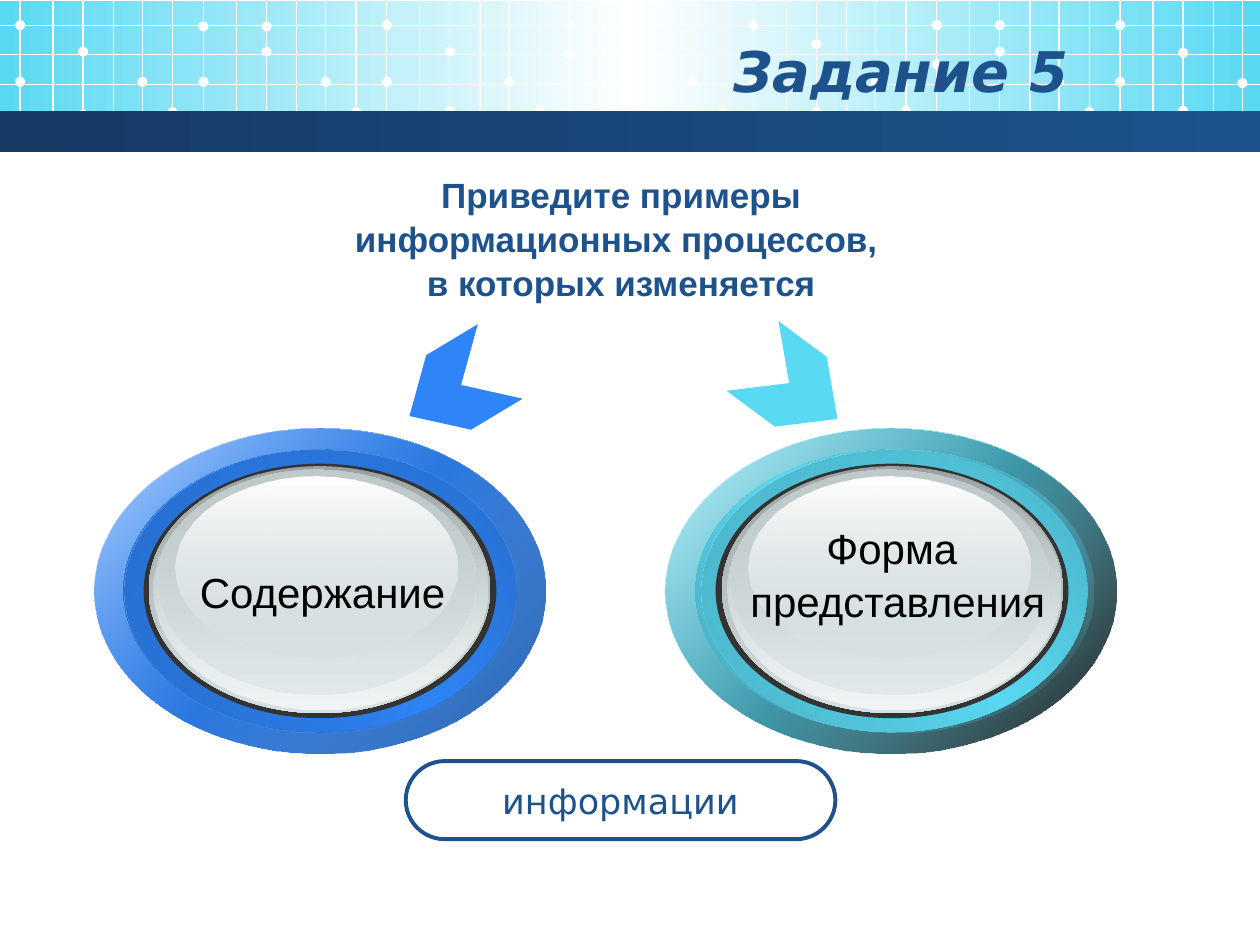
from pptx import Presentation
from pptx.dml.color import RGBColor as RGB
from pptx.enum.shapes import MSO_CONNECTOR as CONN, MSO_SHAPE as SHAPE
from pptx.enum.text import MSO_ANCHOR as ANCHOR, MSO_AUTO_SIZE as AUTO, PP_ALIGN as ALIGN
from pptx.oxml import parse_xml
from pptx.oxml.ns import nsdecls, qn
from pptx.util import Inches, Pt

# Content
TITLE = "Задание 5"
TASK = ["Приведите примеры информационных процессов, ", "в которых изменяется"]
LABELS = [  # box, lines
    ((0.77, 4.43, 3.58, 0.6), ["Содержание"]),
    ((5.46, 4.08, 3.33, 1.07), ["Форма ", "представления"]),
]
BADGE = "информации"
SANS, WIDE = "Arial", "DejaVu Sans"

C = {
    "white": "FFFFFF", "black": "000000", "navy": "1D528D", "night": "153B65",
    "blue": "2F85F7", "aqua": "5AD9F2", "hole": "333333",
    "steel": "99A1A2", "mist": "D6E1E2", "pale": "F2F5F5", "ash": "C1CBCC",
}

# Header grid: tiles of six columns, dots given by column and height
TILE, START = 1.455, 0.16
COLS = (0, 0.26, 0.5, 0.74, 0.97, 1.21)
ROWS = (0.2, 0.43, 0.67, 0.89)
DOT, DOT_COLS = 0.08, (0, 0, 2, 2, 4, 5)
DOTS = [
    (0.65, 0.2, 0.41, 0.91, 0.65, 0.89),
    (0.65, 0.21, 0.41, 0.21, 0.65, 0.89),
    (0.65, 0.2, 0.41, 0.88, 0.65, 0.88),
    (0.43, 0.2, 0.42, 0.2, 0.65, 0.89),
    (0.66, 0.2, 0.35, 0.89, 0.64, 0.88),
    (0.51, 0.2, 0.41, 0.2, 0.65, 0.89),
    (0.65, 0.2, 0.42, 0.88, 0.66),
]

# Discs: left edge, offsets of rim layers and glass, rim gradients
CHEVRONS = [(3.19, 2.74, 149, "blue"), (5.89, 2.73, 36.6, "aqua")]
DISC_TOP = 3.4
RIM = [  # top, width, height, angle
    (0, 3.58, 2.58, 45), (0, 3.58, 2.58, 45),
    (0.17, 3.11, 2.24, 315), (0.17, 3.11, 2.24, 45),
]
DISCS = [
    (5.28, (0, 0, 0.24, 0.29), 0.4, 0.45, [
        [(0, C["white"]), (50, C["aqua"]), (100, C["white"])],
        [(0, C["aqua"], 32), (100, C["black"], 90)],
        [(0, "45A6B9"), (50, C["aqua"]), (100, "45A6B9")],
        [(0, "4AB2C7"), (100, C["aqua"], 0)]]),
    (0.75, (0, 0, 0.23, 0.24), 0.39, 0.43, [
        [(0, C["white"]), (50, C["blue"]), (100, C["white"])],
        [(0, C["blue"], 32), (100, "225FB1")],
        [(0, "2466BD"), (50, C["blue"]), (100, "2466BD")],
        [(0, "276DCB"), (100, C["blue"], 0)]]),
]
GLASS = [  # offset from glass edge, top, width, height, gradient
    (0, 0.3, 2.71, 1.96, [(0, C["steel"]), (100, C["mist"])]),
    (0.04, 0.32, 2.65, 1.91, [(0, C["mist"], 0), (100, C["pale"])]),
    (0.07, 0.33, 2.52, 1.78, [(0, C["ash"]), (100, C["mist"], 48)]),
    (0.21, 0.38, 2.24, 1.45, [(0, C["white"]), (100, C["mist"], 38)]),
]

prs = Presentation()
prs.slide_width, prs.slide_height = Inches(10), Inches(7.5)
slide = prs.slides.add_slide(prs.slide_layouts[5])
shapes = slide.shapes


def grad(stops, angle):
    marks = ""
    for pos, tint, *alpha in stops:
        veil = f'<a:alpha val="{alpha[0] * 1000}"/>' if alpha else ""
        marks += f'<a:gs pos="{pos * 1000}"><a:srgbClr val="{tint}">{veil}</a:srgbClr></a:gs>'
    return parse_xml(f'<a:gradFill {nsdecls("a")} rotWithShape="1"><a:gsLst>{marks}</a:gsLst>'
                     f'<a:lin ang="{angle * 60000}" scaled="0"/></a:gradFill>')


def add(kind, box, fill, angle=0):
    """Add a flat shape; fill is a hex colour or a list of gradient stops."""
    shp = shapes.add_shape(kind, *map(Inches, box))
    shp.shadow.inherit = False
    shp.line.fill.background()
    if isinstance(fill, str):
        shp.fill.solid()
        shp.fill.fore_color.rgb = RGB.from_string(fill)
    else:
        shp.fill.background()
        props = shp._element.spPr
        props.replace(props.find(qn("a:noFill")), grad(fill, angle))
    return shp


def rule(x1, y1, x2, y2):
    line = shapes.add_connector(CONN.STRAIGHT, *map(Inches, (x1, y1, x2, y2)))
    line.line.color.rgb = RGB.from_string(C["white"])
    line.line.width = Pt(0.75)
    line._element.spPr.append(parse_xml(f'<a:effectLst {nsdecls("a")}/>'))


def write(shp, lines, size, font, tint, align=ALIGN.CENTER, wrap=True, bold=False,
          italic=False, space=None):
    frame = shp.text_frame
    frame.word_wrap = wrap
    for i, text in enumerate(lines):
        par = frame.add_paragraph() if i else frame.paragraphs[0]
        par.text, par.alignment, par.line_spacing = text, align, space
        face = par.font
        face.size, face.name, face.bold, face.italic = Pt(size), font, bold, italic
        face.color.rgb = RGB.from_string(tint)
    return frame


# Header
add(SHAPE.RECTANGLE, (0, 0.01, 10, 1.02),
    [(0, C["aqua"]), (50, C["white"]), (100, C["aqua"])])
for n, heights in enumerate(DOTS):
    left = START + n * TILE
    for col in COLS:
        if left + col < 10:
            rule(left + col, 0, left + col, 1.1)
    for col, y in zip(DOT_COLS, heights):
        add(SHAPE.OVAL, (left + COLS[col] - DOT / 2, y - DOT / 2, DOT, DOT), C["white"])
for y in ROWS:
    rule(0, y, 10, y)
add(SHAPE.RECTANGLE, (0, 0.88, 10, 0.33), [(0, C["night"]), (100, C["navy"])])

# Title, raised above the header
title = shapes.title
title.left, title.top, title.width, title.height = map(Inches, (0.5, 0.25, 8.08, 0.62))
write(title, [TITLE], 32, WIDE, C["navy"], ALIGN.RIGHT, bold=True, italic=True)
title.text_frame.vertical_anchor = ANCHOR.MIDDLE
title.text_frame.auto_size = AUTO.NONE
shapes._spTree.append(title._element)

# Chevrons
for x, y, turn, tint in CHEVRONS:
    arrow = add(SHAPE.CHEVRON, (x, y, 0.84, 0.69), C[tint])
    arrow.adjustments[0] = 0.525
    arrow.rotation = turn

# Discs
for left, shifts, hole, glass, fills in DISCS:
    for dx, (dy, w, h, angle), stops in zip(shifts, RIM, fills):
        add(SHAPE.OVAL, (left + dx, DISC_TOP + dy, w, h), stops, angle)
    add(SHAPE.OVAL, (left + hole, DISC_TOP + 0.28, 2.8, 2.02), C["hole"])
    for dx, dy, w, h, stops in GLASS:
        add(SHAPE.OVAL, (left + glass + dx, DISC_TOP + dy, w, h), stops, 90)

# Badge
badge = add(SHAPE.ROUNDED_RECTANGLE, (3.22, 6.04, 3.41, 0.62), C["white"])
badge.adjustments[0] = 0.5
badge.line.color.rgb = RGB.from_string(C["navy"])
badge.line.width = Pt(2.25)
write(badge, [BADGE], 20, WIDE, C["navy"], wrap=False).vertical_anchor = ANCHOR.MIDDLE

# Labels and task
for box, lines in LABELS:
    write(shapes.add_textbox(*map(Inches, box)), lines, 24, SANS, C["black"],
          wrap=False, space=1.05)
write(shapes.add_textbox(*map(Inches, (2.25, 1.31, 5.36, 1.11))), TASK, 20, SANS,
      C["navy"], bold=True, space=1.05)

prs.save("out.pptx")
